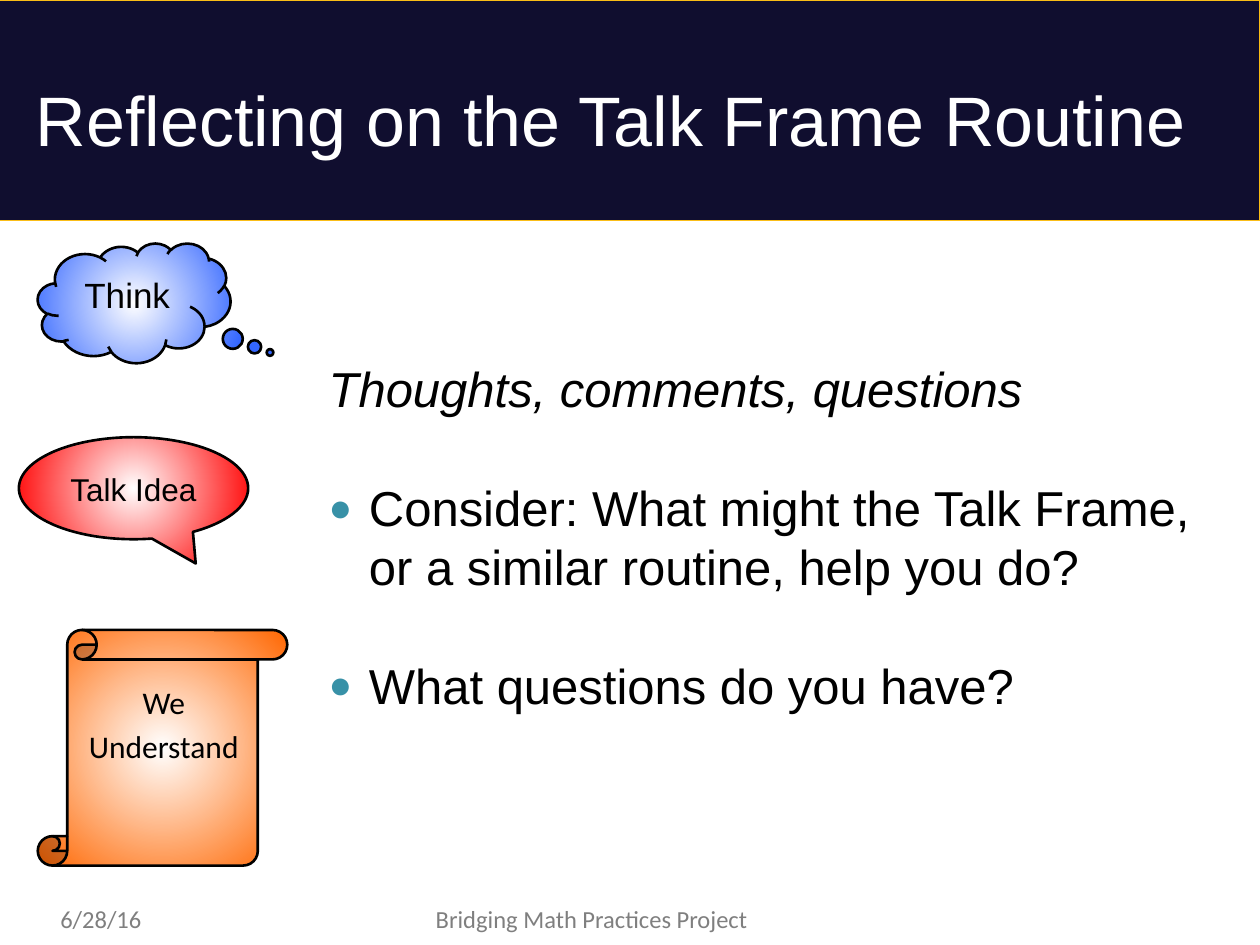
from lxml import etree
from pptx import Presentation
from pptx.dml.color import RGBColor
from pptx.enum.shapes import MSO_SHAPE
from pptx.enum.text import MSO_ANCHOR, MSO_AUTO_SIZE, PP_ALIGN
from pptx.oxml.ns import qn
from pptx.util import Inches, Pt

BLACK = RGBColor(0x00, 0x00, 0x00)
WHITE = RGBColor(0xFF, 0xFF, 0xFF)
GRAY = RGBColor(0x7F, 0x7F, 0x7F)
NAVY = RGBColor(0x10, 0x0E, 0x2F)
GOLD = RGBColor(0xFA, 0xBD, 0x17)
TEAL = RGBColor(0x38, 0x91, 0xA7)
BLUE = RGBColor(0x33, 0x66, 0xFF)
RED = RGBColor(0xFF, 0x00, 0x00)
ORANGE = RGBColor(0xFF, 0x66, 0x00)

CENTER, LEFT = PP_ALIGN.CENTER, PP_ALIGN.LEFT
TOP, MIDDLE = MSO_ANCHOR.TOP, MSO_ANCHOR.MIDDLE
NO_FIT = MSO_AUTO_SIZE.NONE
RECTANGLE = MSO_SHAPE.RECTANGLE
CLOUD = MSO_SHAPE.CLOUD_CALLOUT
SPEECH = MSO_SHAPE.OVAL_CALLOUT
SCROLL = MSO_SHAPE.VERTICAL_SCROLL


def inches(box):
    """Turn a box of left, top, width and height into lengths."""
    return [Inches(value) for value in box]


def set_frame(frame, anchor, insets=(0.1, 0.05, 0.1, 0.05)):
    """Set wrapping, anchor and insets of a text frame."""
    frame.word_wrap = True
    frame.auto_size = NO_FIT
    frame.vertical_anchor = anchor
    (frame.margin_left, frame.margin_top,
     frame.margin_right, frame.margin_bottom) = inches(insets)


def add_span(para, text, size, color, font="Arial", italic=False):
    """Add one formatted run to a paragraph."""
    span = para.add_run()
    span.text = text
    span.font.size = Pt(size)
    span.font.name = font
    span.font.italic = italic
    span.font.color.rgb = color


def add_label(frame, text, size, font="Arial"):
    """Write a centred label with loose line spacing."""
    para = frame.paragraphs[0]
    para.alignment = CENTER
    para.line_spacing = 1.15
    add_span(para, text, size, BLACK, font)


def set_indent(para, margin, indent):
    """Set the left margin and first-line indent in inches."""
    properties = para._p.get_or_add_pPr()
    properties.set("marL", str(Inches(margin)))
    properties.set("indent", str(Inches(indent)))
    return properties


def add_bullet(para):
    """Give a paragraph a teal round bullet."""
    properties = set_indent(para, 0.4, -0.32)
    color = etree.SubElement(properties, qn("a:buClr"))
    etree.SubElement(color, qn("a:srgbClr"), val=str(TEAL))
    etree.SubElement(properties, qn("a:buSzPct"), val="80000")
    etree.SubElement(properties, qn("a:buFont"), typeface="Arial")
    etree.SubElement(properties, qn("a:buChar"), char="●")


def add_glowing_shape(shapes, kind, box, color, adjustments):
    """Add an outlined shape that fades from white at its centre."""
    shape = shapes.add_shape(kind, *inches(box))
    shape.shadow.inherit = False
    shape.line.color.rgb = BLACK
    shape.line.width = Pt(1.5)
    for index, value in enumerate(adjustments):
        shape.adjustments[index] = value
    shape.fill.gradient()
    for stop, stop_color, position in zip(shape.fill.gradient_stops, (WHITE, color), (0, 1)):
        stop.color.rgb = stop_color
        stop.position = position
    gradient = shape.element.spPr.find(qn("a:gradFill"))
    gradient.remove(gradient.find(qn("a:lin")))
    circle = etree.SubElement(gradient, qn("a:path"), path="circle")
    etree.SubElement(circle, qn("a:fillToRect"), l="50000", t="50000", r="50000", b="50000")
    return shape


def add_header(page, band_box, title_box):
    """Place the navy band with the title in front of it."""
    band = page.shapes.add_shape(RECTANGLE, *inches(band_box))
    band.shadow.inherit = False
    band.fill.solid()
    band.fill.fore_color.rgb = NAVY
    band.line.color.rgb = GOLD
    band.line.width = Pt(0.75)
    title = page.shapes.title
    title.element.addprevious(band.element)
    title.left, title.top, title.width, title.height = inches(title_box)
    set_frame(title.text_frame, MIDDLE, (0.1, 0.1, 0.41, 0.83))
    para = title.text_frame.paragraphs[0]
    para.alignment = CENTER
    add_span(para, "Reflecting on the Talk Frame Routine", 40, WHITE)


def add_callout(page, kind, box, color, adjustments, text, size, insets):
    """Place one callout with its label."""
    callout = add_glowing_shape(page.shapes, kind, box, color, adjustments)
    set_frame(callout.text_frame, TOP, insets)
    add_label(callout.text_frame, text, size)


def add_scroll(page, box):
    """Place the scroll grouped with its label."""
    left, top, width, height = box
    group = page.shapes.add_group_shape()
    add_glowing_shape(group.shapes, SCROLL, box, ORANGE, [0.125])
    label_box = (left + 0.11, top + 0.33, width - 0.2, height - 0.25)
    label = group.shapes.add_textbox(*inches(label_box))
    set_frame(label.text_frame, TOP, (0.2, 0.05, 0.2, 0.05))
    add_label(label.text_frame, "We Understand", 18, "Calibri")


def add_prompts(page, box):
    """Place the italic lead line and the bulleted questions."""
    frame = page.shapes.add_textbox(*inches(box)).text_frame
    set_frame(frame, MIDDLE, (0.1, 0.1, 0.1, 0.63))
    lead = frame.paragraphs[0]
    set_indent(lead, 0.09, -0.01)
    add_span(lead, "Thoughts, comments, questions", 28, BLACK, italic=True)
    for text in (
        "Consider: What might the Talk Frame, or a similar routine, help you do?",
        "What questions do you have?",
    ):
        para = frame.add_paragraph()
        para.space_before = Pt(34.4)
        add_bullet(para)
        add_span(para, text, 28, BLACK)


def add_footer(page, box, text):
    """Place one gray footer text."""
    frame = page.shapes.add_textbox(*inches(box)).text_frame
    set_frame(frame, MIDDLE)
    frame.paragraphs[0].alignment = LEFT
    add_span(frame.paragraphs[0], text, 14, GRAY, "Calibri")


def main():
    """Build the slide and save the deck."""
    deck = Presentation()
    deck.slide_width, deck.slide_height = Inches(10), Inches(7.5)
    page = deck.slides.add_slide(deck.slide_layouts[5])
    add_header(page, (-0.04, 0, 10.04, 1.75), (0, 0.68, 10, 1.25))
    add_footer(page, (0.38, 7.12, 1.65, 0.34), "6/28/16")
    add_footer(page, (3.36, 7.12, 2.95, 0.34), "Bridging Math Practices Project")
    add_callout(page, CLOUD, (0.3, 1.93, 1.53, 0.95), BLUE, (0.705, 0.413),
                "Think", 20, (0.1, 0.05, 0.1, 0.05))
    add_callout(page, SPEECH, (0.15, 3.47, 1.82, 0.81), RED, (0.271, 0.737),
                "Talk Idea", 18, (0.1, 0.1, 0.1, 0.1))
    add_scroll(page, (0.3, 5, 1.98, 1.87))
    add_prompts(page, (2.43, 2.25, 7.28, 4.55))
    deck.save("out.pptx")


if __name__ == "__main__":
    main()
